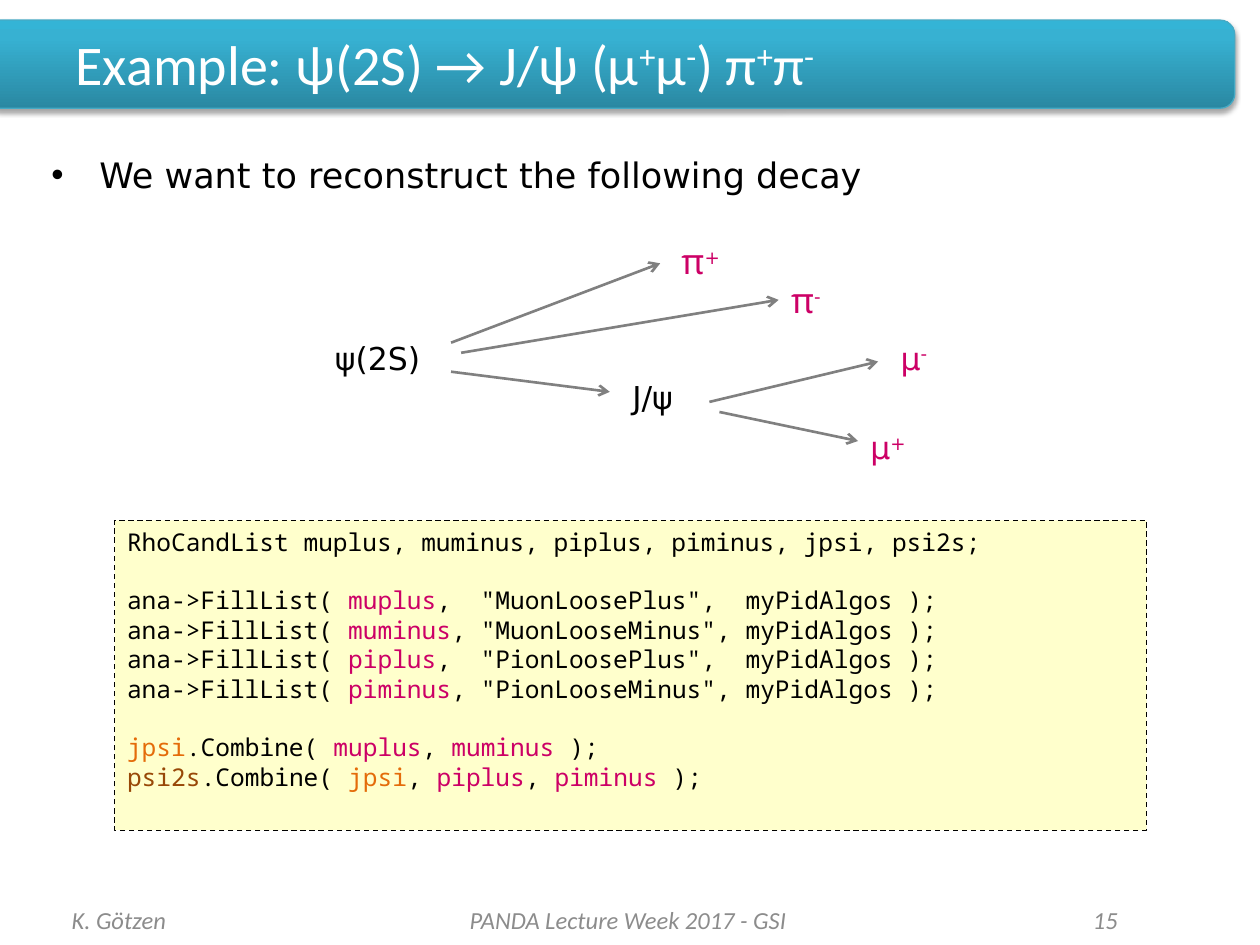
from copy import deepcopy

from lxml import etree
from pptx import Presentation
from pptx import util as u
from pptx.dml.color import RGBColor
from pptx.enum import dml, shapes, text
from pptx.oxml.ns import qn

COLORS = {
    "black": "000000", "white": "FFFFFF", "grey": "808080", "footer": "8C8C8C",
    "final": "CC0066", "jpsi": "E46C0A", "psi2s": "984807", "code": "FFFFCC",
    "edge": "46AAC5", "dark": "2A88A2", "mid": "37B1D2", "light": "34B4D6",
}
SANS, HEAD, MONO, PION = "DejaVu Sans", "Calibri", "Noto Sans Mono", "Cabin"
CODE_LINE = 16.8  # height of one code line in points
LEFT, CENTER, RIGHT = text.PP_ALIGN.LEFT, text.PP_ALIGN.CENTER, text.PP_ALIGN.RIGHT


def rgb(name):
    return RGBColor.from_string(COLORS[name])


def add_span(para, words, font=SANS, size=18, color="black", italic=False, raised=False):
    span = para.add_run()
    span.text = words
    span.font.name, span.font.size = font, u.Pt(size)
    span.font.color.rgb = rgb(color)
    if italic:
        span.font.italic = True
    if raised:
        span.font._element.set("baseline", "30000")


class Slide:
    def __init__(self, deck):
        self.page = deck.slides.add_slide(deck.slide_layouts[5])

    def banner(self, *place):
        bar = self.page.shapes.add_shape(
            shapes.MSO_SHAPE.ROUNDED_RECTANGLE, *map(u.Inches, place))
        bar.line.color.rgb, bar.line.width = rgb("edge"), u.Pt(0.75)
        bar.fill.gradient()
        bar.fill.gradient_angle = 90
        last = bar._element.spPr.find(".//" + qn("a:gsLst"))[-1]
        last.addprevious(deepcopy(last))
        for stop, name, position in zip(
                bar.fill.gradient_stops, ("dark", "mid", "light"), (0, 0.8, 1)):
            stop.color.rgb, stop.position = rgb(name), position
        # Soft shadow below the bar
        bar.shadow.inherit = False
        effects = bar._element.spPr.find(qn("a:effectLst"))
        shadow = etree.SubElement(effects, qn("a:outerShdw"), blurRad=str(u.Pt(3.1)),
                                  dist=str(u.Pt(1.8)), dir="5400000", rotWithShape="0")
        tint = etree.SubElement(shadow, qn("a:srgbClr"), val=COLORS["black"])
        etree.SubElement(tint, qn("a:alpha"), val="35000")
        # Keep the bar behind the title
        self.page.shapes._spTree.insert(2, bar._element)

    def title(self, parts, *place):
        box = self.page.shapes.title
        box.left, box.top, box.width, box.height = map(u.Inches, place)
        frame = box.text_frame
        frame.auto_size = text.MSO_AUTO_SIZE.NONE
        frame.vertical_anchor = text.MSO_ANCHOR.MIDDLE
        para = frame.paragraphs[0]
        para.alignment = LEFT
        for words in parts:
            add_span(para, words, font=HEAD, size=32, color="white",
                     raised=words in "+-")

    def textbox(self, *place, wrap=True, align=LEFT, anchor=text.MSO_ANCHOR.TOP):
        box = self.page.shapes.add_textbox(*map(u.Inches, place))
        box.text_frame.word_wrap = wrap
        box.text_frame.vertical_anchor = anchor
        para = box.text_frame.paragraphs[0]
        para.alignment = align
        return para

    def bullet(self, words, *place):
        para = self.textbox(*place)
        props = para._p.get_or_add_pPr()
        props.set("marL", str(u.Inches(0.38)))
        props.set("indent", str(-u.Inches(0.38)))
        etree.SubElement(props, qn("a:buFont"), typeface="Arial")
        etree.SubElement(props, qn("a:buChar"), char="•")
        add_span(para, words, size=20)

    def particle(self, name, charge, *place):
        para = self.textbox(*place, wrap=False)
        color = "final" if charge else "black"
        pion = name == "π"
        add_span(para, name, font=PION if pion else SANS, size=20 if pion else 18,
                 color=color)
        if charge:
            add_span(para, charge, color=color, raised=True)

    def arrow(self, *ends):
        line = self.page.shapes.add_connector(
            shapes.MSO_CONNECTOR.STRAIGHT, *map(u.Inches, ends))
        line.line.color.rgb, line.line.width = rgb("grey"), u.Pt(1.5)
        etree.SubElement(line.line._get_or_add_ln(), qn("a:tailEnd"), type="arrow")
        etree.SubElement(line._element.spPr, qn("a:effectLst"))

    def code(self, blocks, *place):
        box = self.page.shapes.add_shape(
            shapes.MSO_SHAPE.RECTANGLE, *map(u.Inches, place))
        box.shadow.inherit = False
        box.fill.solid()
        box.fill.fore_color.rgb = rgb("code")
        box.line.color.rgb, box.line.width = rgb("black"), u.Pt(0.75)
        box.line.dash_style = dml.MSO_LINE.DASH
        frame = box.text_frame
        frame.word_wrap = True
        frame.vertical_anchor = text.MSO_ANCHOR.TOP
        para = frame.paragraphs[0]
        for b, block in enumerate(blocks):
            for i, line in enumerate(block):
                if b or i:
                    para = frame.add_paragraph()
                para.alignment = LEFT
                # One free line between blocks
                para.space_before = u.Pt(CODE_LINE if b and not i else 0)
                for words, color in line:
                    add_span(para, words, font=MONO, size=14, color=color)

    def footer(self, words, align, *place):
        para = self.textbox(*place, align=align, anchor=text.MSO_ANCHOR.MIDDLE)
        add_span(para, words, font=HEAD, size=14, color="footer", italic=True)


def fill_line(name, selector):
    """Align the arguments of the FillList calls in columns."""
    gap = " " * (len("muminus") - len(name) + 1)
    return [("ana->FillList( ", "black"), (name, "final"),
            (f',{gap}"{selector}",{gap}myPidAlgos );', "black")]


def combine_line(target, *parts):
    line = [(target, target), (".Combine( ", "black")]
    for i, name in enumerate(parts):
        if i:
            line.append((", ", "black"))
        line.append((name, "jpsi" if name == "jpsi" else "final"))
    return line + [(" );", "black")]


def main():
    deck = Presentation()
    deck.slide_width, deck.slide_height = u.Inches(10), u.Inches(7.5)
    slide = Slide(deck)

    # Heading
    slide.banner(-0.12, 0.16, 9.92, 0.7)
    slide.title(["Example: ψ(2S) → J/ψ (μ", "+", "μ", "-", ") π", "+", "π", "-"],
                0.5, 0.18, 9, 0.64)
    slide.bullet("We want to reconstruct the following decay", 0.31, 1.17, 9.38, 5.78)

    # Decay tree
    for particle in (
        ("ψ(2S)", "", 2.56, 2.64, 0.97, 0.4),
        ("π", "+", 5.31, 1.85, 0.52, 0.44),
        ("π", "-", 6.18, 2.16, 0.46, 0.44),
        ("J/ψ", "", 4.92, 2.95, 0.64, 0.4),
        ("μ", "-", 7.05, 2.64, 0.44, 0.4),
        ("μ", "+", 6.81, 3.35, 0.5, 0.4),
    ):
        slide.particle(*particle)
    for ends in (
        (3.58, 2.72, 5.24, 2.09), (3.66, 2.8, 6.18, 2.38), (3.58, 2.95, 4.84, 3.11),
        (5.63, 3.19, 6.97, 2.87), (5.71, 3.27, 6.81, 3.5),
    ):
        slide.arrow(*ends)

    # Code listing
    slide.code([
        [[("RhoCandList muplus, muminus, piplus, piminus, jpsi, psi2s;", "black")]],
        [fill_line("muplus", "MuonLoosePlus"), fill_line("muminus", "MuonLooseMinus"),
         fill_line("piplus", "PionLoosePlus"), fill_line("piminus", "PionLooseMinus")],
        [combine_line("jpsi", "muplus", "muminus"),
         combine_line("psi2s", "jpsi", "piplus", "piminus")],
    ], 0.91, 4.13, 8.19, 2.46)

    # Footer
    slide.footer("K. Götzen", LEFT, 0.47, 7.1, 2.33, 0.4)
    slide.footer("PANDA Lecture Week 2017 - GSI", CENTER, 3.03, 7.1, 3.91, 0.4)
    slide.footer("15", RIGHT, 7.5, 7.1, 1.47, 0.4)

    deck.save("out.pptx")


if __name__ == "__main__":
    main()
